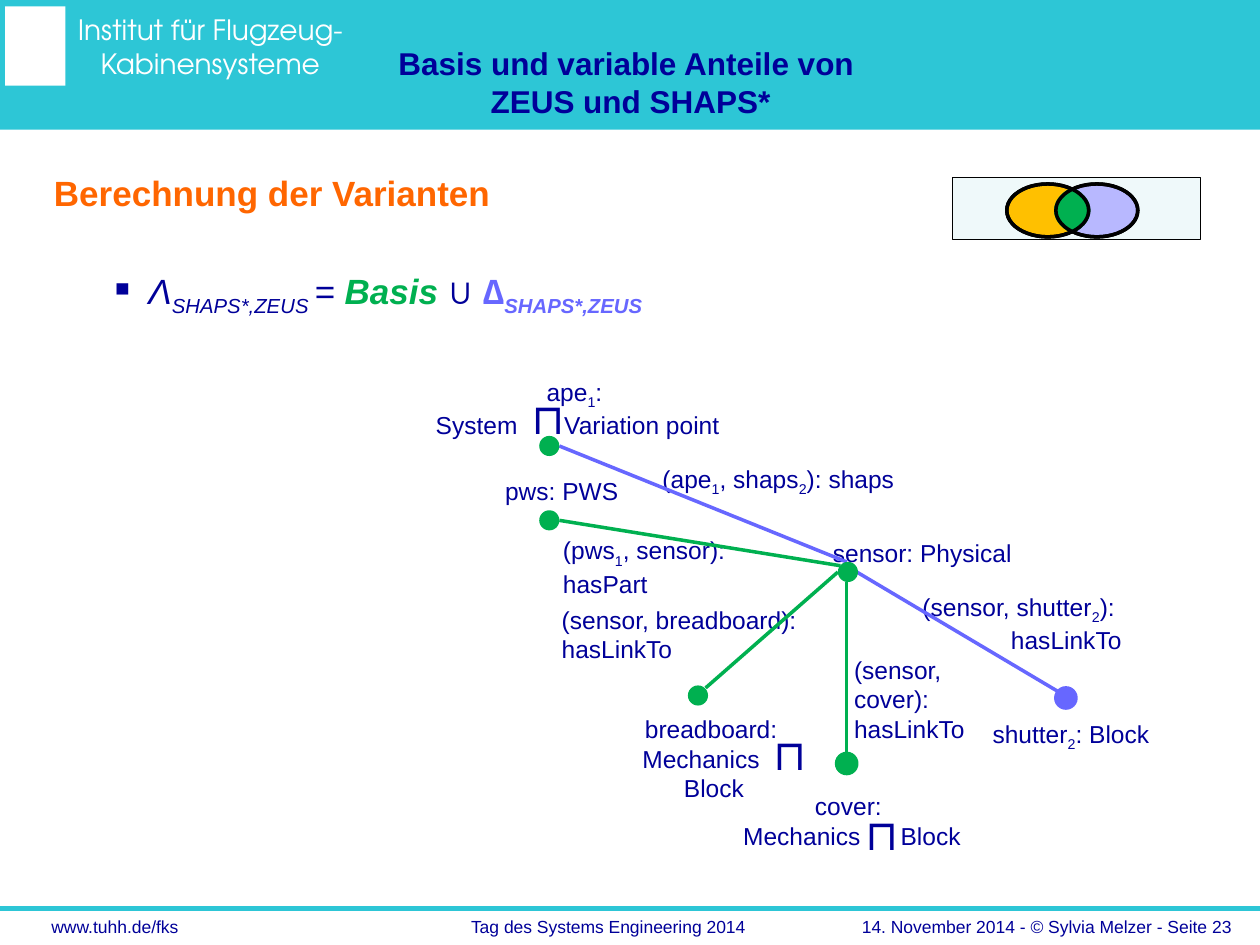
import math
from dataclasses import dataclass

import lxml.etree
import pptx
import pptx.dml.color
import pptx.enum.shapes
import pptx.enum.text
import pptx.oxml.ns
import pptx.util


@dataclass(frozen=True)
class Theme:
    """Colours, fonts and type sizes of the deck."""

    cyan: str = "2DC6D6"
    navy: str = "000099"
    orange: str = "FF6600"
    green: str = "00B050"
    violet: str = "6767FF"
    lilac: str = "B8B8FF"
    amber: str = "FFC000"
    mist: str = "EFF9FA"
    white: str = "FFFFFF"
    black: str = "000000"
    font: str = "Arial"
    brand_font: str = "TeX Gyre Adventor"
    footer: int = 10
    label: int = 14
    brand: int = 16
    title: int = 18
    body: int = 20
    symbol: int = 24


THEME = Theme()
CELL = 0.1
COLUMNS, ROWS = 100, 75
SHAPES = pptx.enum.shapes.MSO_SHAPE
ALIGN = pptx.enum.text.PP_ALIGN


def cells(*counts):
    """Turn grid cells into slide lengths."""
    return [pptx.util.Inches(count * CELL) for count in counts]


def rgb(colour):
    """Make a colour from its hex value."""
    return pptx.dml.color.RGBColor.from_string(colour)


def add_element(parent, tag, **values):
    """Append a drawing element with attributes to its parent."""
    element = lxml.etree.SubElement(parent, pptx.oxml.ns.qn(tag))
    for name, value in values.items():
        element.set(name, str(value))
    return element


def write(para, markup, colour=THEME.navy, **formats):
    """Write runs, setting the parts between underscores as subscripts."""
    values = {"name": THEME.font, "size": THEME.label, **formats}
    values["size"] = pptx.util.Pt(values["size"])
    for index, part in enumerate(markup.split("_")):
        if not part:
            continue
        span = para.add_run()
        span.text = part
        for name, value in values.items():
            setattr(span.font, name, value)
        span.font.color.rgb = rgb(colour)
        if index % 2:
            span.font._element.set("baseline", "-25000")


def add_box(page, place, wrap=True):
    """Add an empty text box on the grid and return its text frame."""
    frame = page.shapes.add_textbox(*cells(*place)).text_frame
    frame.word_wrap = wrap
    return frame


def add_text(page, place, *lines, align=ALIGN.LEFT, indents=(), tab=None, wrap=True, spacing=None, **formats):
    """Add a text box with one paragraph per line."""
    frame = add_box(page, place, wrap)
    for index, line in enumerate(lines):
        para = frame.paragraphs[0] if index == 0 else frame.add_paragraph()
        para.alignment = align
        if spacing:
            para.line_spacing = spacing
        properties = para._p.get_or_add_pPr()
        if indents:
            properties.set("marL", str(cells(indents[index])[0]))
        if tab and "\t" in line:
            stops = add_element(properties, "a:tabLst")
            add_element(stops, "a:tab", pos=cells(tab)[0], algn="l")
        write(para, line, **formats)
    return frame


def paint(shape, fill=None, line=None, width=2):
    """Set fill and outline of a shape without shadow."""
    shape.shadow.inherit = False
    if fill:
        shape.fill.solid()
        shape.fill.fore_color.rgb = rgb(fill)
    else:
        shape.fill.background()
    if line:
        shape.line.color.rgb = rgb(line)
        shape.line.width = pptx.util.Pt(width)
    else:
        shape.line.fill.background()


def add_figure(page, kind, place, **look):
    """Add a painted preset shape on the grid."""
    paint(page.shapes.add_shape(kind, *cells(*place)), **look)


def add_line(page, start, end, colour, width=2):
    """Add a straight connector between two grid points."""
    line = page.shapes.add_connector(pptx.enum.shapes.MSO_CONNECTOR.STRAIGHT, *cells(*start, *end))
    line.line.color.rgb = rgb(colour)
    line.line.width = pptx.util.Pt(width)
    add_element(line._element.spPr, "a:effectLst")


def add_frame(page):
    """Add the banner, the title and the footer."""
    add_line(page, (0, 72.1), (COLUMNS, 72.1), THEME.cyan, 3)
    add_figure(page, SHAPES.RECTANGLE, (0, 0, COLUMNS, 10.3), fill=THEME.cyan)
    add_figure(page, SHAPES.RECTANGLE, (0.4, 0.5, 4.8, 6.3), fill=THEME.white)
    add_text(page, (4.1, 0.5, 25.2, 6.4), "Institut für Flugzeug-", "Kabinensysteme",
             align=ALIGN.CENTER, name=THEME.brand_font, size=THEME.brand, colour=THEME.white)
    add_text(page, (25.8, 3, 48.5, 7.4), "Basis und variable Anteile von ", "ZEUS und SHAPS*",
             align=ALIGN.CENTER, size=THEME.title, bold=True)
    add_text(page, (3.1, 72.2, 19.5, 2.7), "www.tuhh.de/fks", size=THEME.footer)
    add_text(page, (36.4, 72.2, 23.9, 2.7), "Tag des Systems Engineering 2014", size=THEME.footer)
    add_text(page, (65.6, 72.5, 33.1, 2.3), "14. November 2014 - © Sylvia Melzer - Seite 23",
             align=ALIGN.RIGHT, spacing=0.8, size=THEME.footer)


def add_body(page):
    """Add the heading and the formula of the variants."""
    frame = add_text(page, (2.7, 13.1, 72, 14), "Berechnung der Varianten", indents=[0.6],
                     size=THEME.body, colour=THEME.orange, bold=True)
    para = frame.add_paragraph()
    para.space_before = pptx.util.Pt(32)
    properties = para._p.get_or_add_pPr()
    for name, length in {"marL": 8.1, "indent": -3.1}.items():
        properties.set(name, str(cells(length)[0]))
    add_element(properties, "a:buChar", char="▪")
    for markup, colour, bold in (
        ("Λ_SHAPS*,ZEUS _= ", THEME.navy, False),
        ("Basis ", THEME.green, True),
        ("∪ ", THEME.navy, False),
        ("∆_SHAPS*,ZEUS_", THEME.violet, True),
    ):
        write(para, markup, colour, size=THEME.body, bold=bold, italic=True)


def add_labels(page):
    """Add the labels of the nodes and edges."""
    add_text(page, (33.6, 29.4, 28, 5.7), "ape_1_:", "System\tVariation point", indents=(8.8, 0), tab=10.2)
    add_text(page, (50, 56.2, 16, 8), "breadboard:", "Mechanics", "Block", indents=(0.2, 0, 3.3))
    add_text(page, (58, 62.3, 22, 5.7), "cover:", "Mechanics\tBlock", indents=(5.7, 0), tab=12.5)
    add_text(page, (66.6, 46.5, 23.4, 5.7), "(sensor, shutter_2_): ", "hasLinkTo", align=ALIGN.RIGHT)
    add_text(page, (43.7, 42, 18, 5.7), "(pws_1_, sensor):", "hasPart")
    for place, label, align in (
        ((64.2, 42.2, 18, 3.4), "sensor: Physical", ALIGN.CENTER),
        ((76, 56.6, 18, 3.4), "shutter_2_: Block", ALIGN.CENTER),
        ((43.6, 47.5, 22.7, 5.7), "(sensor, breadboard): hasLinkTo", ALIGN.LEFT),
        ((66.8, 51.5, 14, 8), "(sensor, cover): hasLinkTo", ALIGN.LEFT),
        ((51.6, 36.3, 27.4, 3.4), "(ape_1_, shaps_2_): shaps", ALIGN.LEFT),
        ((39.1, 37.3, 17.1, 3.4), "pws: PWS", ALIGN.LEFT),
    ):
        add_text(page, place, label, align=align)
    for left, top in ((41.2, 30.7), (67.7, 63.7), (60.4, 57.3)):
        add_text(page, (left, top, 3.8, 4), "⊓", wrap=False, size=THEME.symbol)


def add_graph(page):
    """Add the edges and nodes of the object graph."""
    for start, end, colour in (
        ((66.5, 45.4), (56, 54.6), THEME.green),
        ((68, 45.4), (84, 54.9), THEME.violet),
        ((67.2, 46.2), (67.2, 59.8), THEME.green),
        ((44.4, 35.4), (67.2, 44.6), THEME.violet),
        ((44.4, 41.3), (66.7, 44.9), THEME.green),
    ):
        add_line(page, start, end, colour)
    for left, top, colour, outline in (
        (54.6, 54.4, THEME.green, None),
        (66.5, 44.6, THEME.green, None),
        (83.8, 54.6, THEME.violet, THEME.violet),
        (66.4, 59.8, THEME.green, THEME.green),
        (42.8, 34.6, THEME.green, None),
        (42.8, 40.5, THEME.green, None),
    ):
        add_figure(page, SHAPES.OVAL, (left, top, 1.6, 1.6), fill=colour, line=outline)


def add_venn(page):
    """Add two overlapping sets with their intersection."""
    add_figure(page, SHAPES.RECTANGLE, (75.6, 14.1, 19.7, 4.9), fill=THEME.mist, line=THEME.black, width=0.25)
    left, right, top, width, height = 79.9, 83.8, 14.6, 6.5, 4.2
    sets = ((right, THEME.lilac), (left, THEME.amber))
    for start, colour in sets:
        add_figure(page, SHAPES.OVAL, (start, top, width, height), fill=colour, line=THEME.black)
    half = math.acos((right - left) / width)
    steps = [half * step / 12 for step in range(-12, 13)]
    arcs = [(left, angle) for angle in steps] + [(right, math.pi + angle) for angle in steps]
    points = [
        cells(start + width / 2 * (1 + math.cos(angle)), top + height / 2 * (1 + math.sin(angle)))
        for start, angle in arcs
    ]
    builder = page.shapes.build_freeform(*points[0])
    builder.add_line_segments(points[1:], close=True)
    paint(builder.convert_to_shape(), fill=THEME.green, line=THEME.green)
    for start, _ in sets:
        add_figure(page, SHAPES.OVAL, (start, top, width, height), line=THEME.black)


def main():
    """Build the slide and save the deck."""
    deck = pptx.Presentation()
    deck.slide_width, deck.slide_height = cells(COLUMNS, ROWS)
    page = deck.slides.add_slide(deck.slide_layouts[6])
    for add_part in (add_frame, add_body, add_labels, add_graph, add_venn):
        add_part(page)
    deck.save("out.pptx")


if __name__ == "__main__":
    main()
